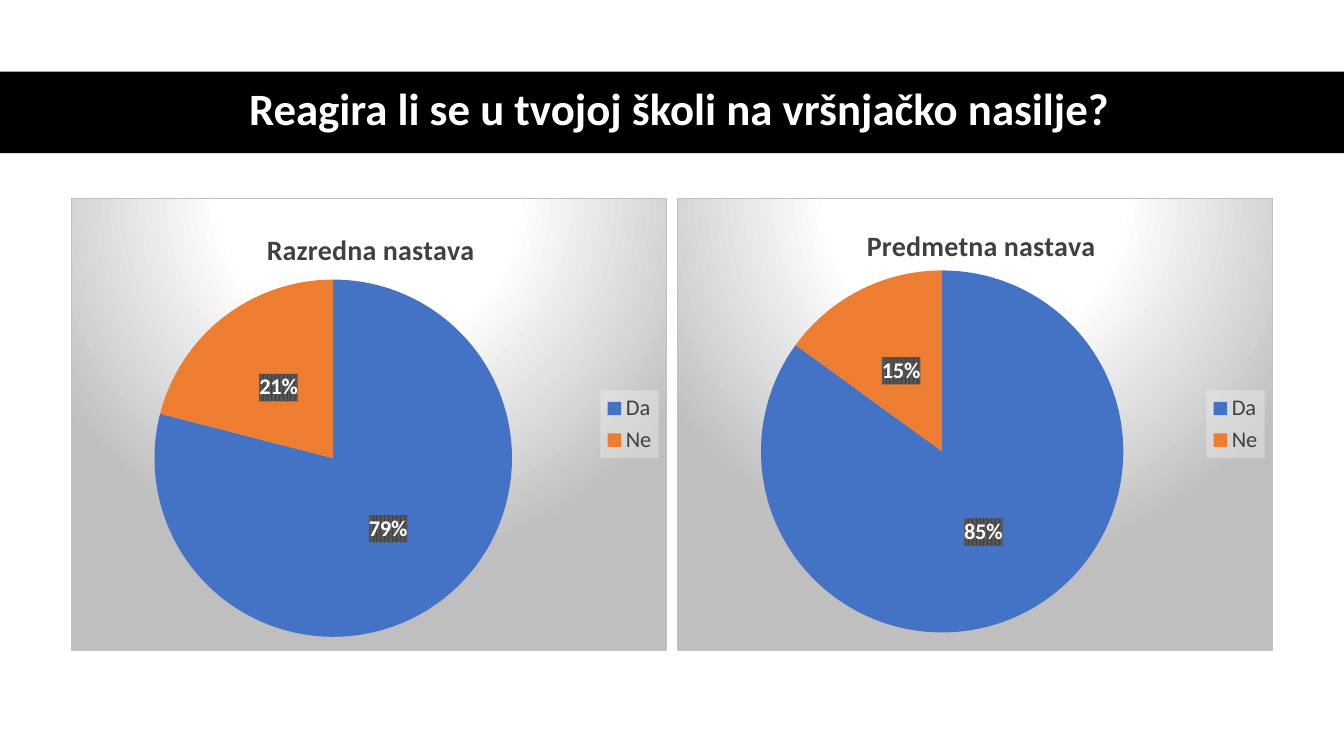
"""Build a slide with two pie charts on reactions to peer violence at school."""
from lxml import etree
from pptx import Presentation
from pptx import util as u
from pptx.chart import data
from pptx.dml import color
from pptx.enum import chart as ch
from pptx.enum import shapes, text
from pptx.oxml import ns

HEADING = "Reagira li se u tvojoj školi na vršnjačko nasilje?"
ANSWERS = {"Da": "4472C4", "Ne": "ED7D31"}
PIES = [
    {"title": "Razredna nastava", "shares": (79, 21),
     "title_at": (0.32, 0.06), "plot_at": (0.14, 0.18, 0.6, 0.79)},
    {"title": "Predmetna nastava", "shares": (85, 15),
     "title_at": (0.31, 0.05), "plot_at": (0.14, 0.16, 0.61, 0.8)},
]
LEFT, TOP, WIDTH, HEIGHT, GAP = 0.7, 1.96, 5.92, 4.5, 0.09
FONT, DARK, WHITE, GREY = "Calibri", "404040", "FFFFFF", "BFBFBF"

STOPS = "".join(f'<a:gs pos="{pos * 1000}"><a:srgbClr val="{tone}"/></a:gs>'
                for pos, tone in ((0, WHITE), (39, WHITE), (100, GREY)))
PANEL = (f'<a:gradFill><a:gsLst>{STOPS}</a:gsLst><a:path path="circle">'
         '<a:fillToRect l="50000" t="-80000" r="50000" b="180000"/></a:path></a:gradFill>'
         f'<a:ln w="9525"><a:solidFill><a:srgbClr val="{GREY}"/></a:solidFill></a:ln>')
LABEL = ('<a:pattFill prst="pct75"><a:fgClr><a:srgbClr val="404040"/></a:fgClr>'
         '<a:bgClr><a:srgbClr val="595959"/></a:bgClr></a:pattFill>')
LEGEND = ('<a:solidFill><a:srgbClr val="F2F2F2"><a:alpha val="39000"/>'
          '</a:srgbClr></a:solidFill>')


def rgb(value):
    return color.RGBColor.from_string(value)


def style(font, size, tone, bold=False):
    font.name, font.size, font.bold = FONT, u.Pt(size), bold
    font.color.rgb = rgb(tone)


def write(frame, words, size, tone, bold=True, spacing=None):
    paragraph = frame.paragraphs[0]
    paragraph.alignment = text.PP_ALIGN.CENTER
    if spacing:
        paragraph.line_spacing = spacing
    run = paragraph.add_run()
    run.text = words
    style(run.font, size, tone, bold)


def chart_xml(tag, body):
    return etree.fromstring(f'<c:{tag} xmlns:c="{ns.nsuri("c")}" '
                            f'xmlns:a="{ns.nsuri("a")}">{body}</c:{tag}>')


def place(part, index, spots, inner=False):
    for old in part.xpath("c:layout"):
        part.remove(old)
    target = '<c:layoutTarget val="inner"/>' if inner else ""
    modes = '<c:xMode val="edge"/><c:yMode val="edge"/>'
    values = "".join(f'<c:{key} val="{spot}"/>' for key, spot in zip("xywh", spots))
    part.insert(index, chart_xml("layout", f"<c:manualLayout>{target}{modes}{values}</c:manualLayout>"))


def add_pie(slide, left, pie):
    shares = data.CategoryChartData()
    shares.categories = list(ANSWERS)
    shares.add_series("Series 1", pie["shares"])
    chart = slide.shapes.add_chart(
        ch.XL_CHART_TYPE.PIE, u.Inches(left), u.Inches(TOP),
        u.Inches(WIDTH), u.Inches(HEIGHT), shares).chart
    style(chart.font, 10, "000000")
    write(chart.chart_title.text_frame, pie["title"], 20, DARK)

    chart.has_legend = True
    chart.legend.position = ch.XL_LEGEND_POSITION.RIGHT
    chart.legend.include_in_layout = False
    style(chart.legend.font, 16, DARK)

    plot = chart.plots[0]
    plot.vary_by_categories = True
    for index, tone in enumerate(ANSWERS.values()):
        fill = plot.series[0].points[index].format.fill
        fill.solid()
        fill.fore_color.rgb = rgb(tone)
    labels = plot.series[0].data_labels
    labels.show_percentage, labels.show_value = True, False
    labels.number_format, labels.number_format_is_linked = "0%", False
    labels.position = ch.XL_LABEL_POSITION.CENTER
    style(labels.font, 16, WHITE, True)

    root = chart.element
    place(root.xpath("c:chart/c:title")[0], 1, pie["title_at"])
    place(root.xpath("c:chart/c:plotArea")[0], 0, pie["plot_at"], inner=True)
    for route, body in (("c:txPr", PANEL), ("c:chart/c:legend/c:txPr", LEGEND),
                        (".//c:ser/c:dLbls/c:txPr", LABEL)):
        root.xpath(route)[0].addprevious(chart_xml("spPr", body))


def main():
    deck = Presentation()
    deck.slide_width, deck.slide_height = u.Inches(13.33), u.Inches(7.5)
    slide = deck.slides.add_slide(deck.slide_layouts[6])

    band = slide.shapes.add_shape(shapes.MSO_SHAPE.RECTANGLE, 0, u.Inches(0.71),
                                  deck.slide_width, u.Inches(0.81))
    band.shadow.inherit = False
    band.fill.solid()
    band.fill.fore_color.rgb = rgb("000000")
    band.line.fill.background()

    heading = slide.shapes.add_textbox(u.Inches(0.61), u.Inches(0.7),
                                       u.Inches(12.26), u.Inches(0.81)).text_frame
    heading.word_wrap = True
    heading.vertical_anchor = text.MSO_ANCHOR.MIDDLE
    write(heading, HEADING, 32, WHITE, spacing=0.9)

    for column, pie in enumerate(PIES):
        add_pie(slide, LEFT + column * (WIDTH + GAP), pie)
    deck.save("out.pptx")


if __name__ == "__main__":
    main()
